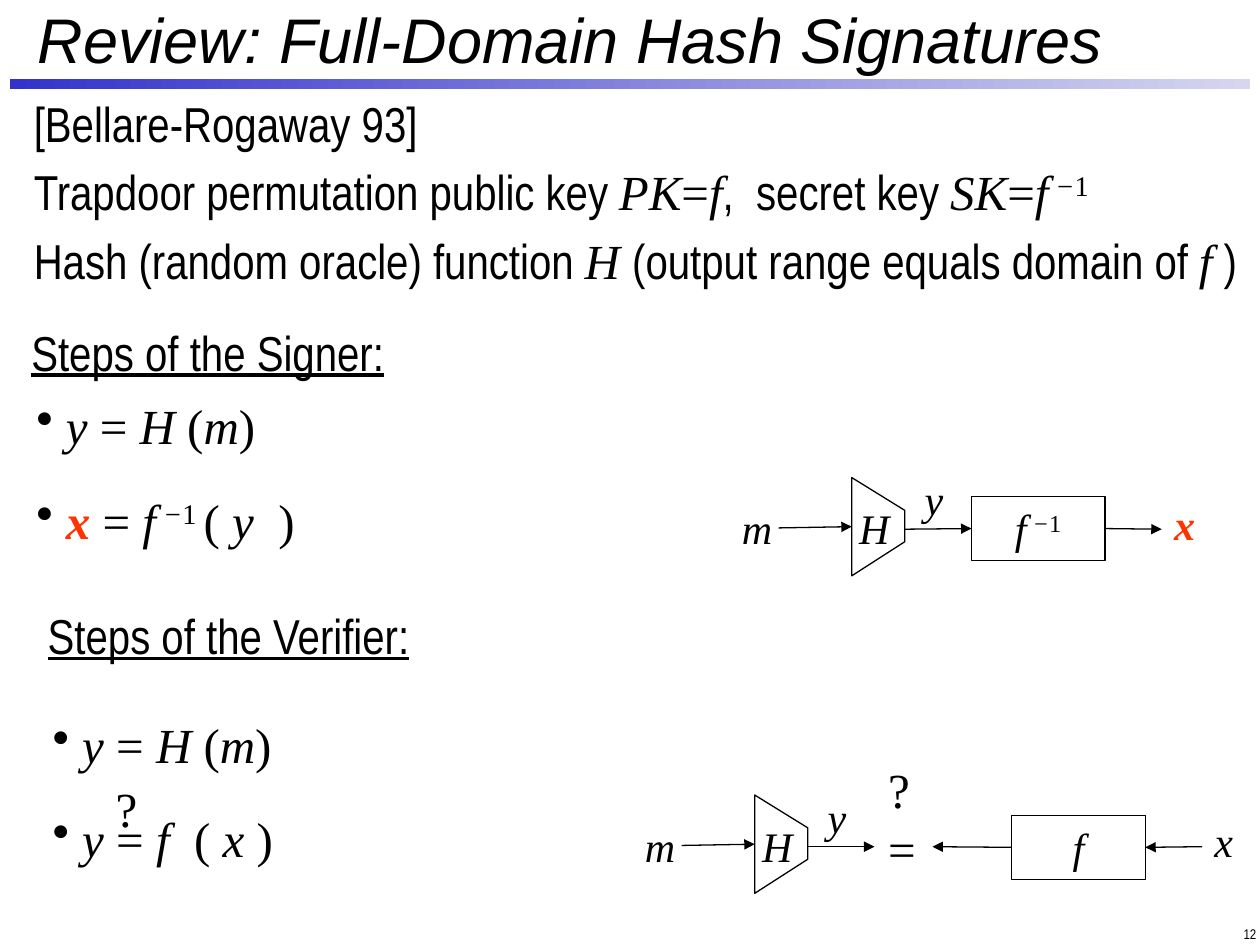
"""Build the slide on full-domain hash signatures."""
from lxml import etree
from pptx import Presentation
from pptx.dml.color import RGBColor
from pptx.enum.shapes import MSO_CONNECTOR, MSO_SHAPE
from pptx.enum.text import MSO_ANCHOR, PP_ALIGN
from pptx.oxml.ns import qn
from pptx.util import Pt

PX = 9144
STRAIGHT, RECT = MSO_CONNECTOR.STRAIGHT, MSO_SHAPE.RECTANGLE
TOP, MIDDLE = MSO_ANCHOR.TOP, MSO_ANCHOR.MIDDLE
LEFT, CENTER, RIGHT = PP_ALIGN.LEFT, PP_ALIGN.CENTER, PP_ALIGN.RIGHT
THEME = {
    "ink": RGBColor(0, 0, 0), "red": RGBColor(0xFF, 0x33, 0),
    "bar": (RGBColor(0x33, 0x33, 0xCC), RGBColor(0xD6, 0xD6, 0xEF)),
    "title": 36, "text": 28, "label": 24, "number": 8, "line": 0.75,
    "sans": "Arial", "narrow": "Arial Narrow", "serif": "Times New Roman",
}


def write(tf, paras, size, before=50, align=LEFT, anchor=TOP, wrap=False,
          bullet=False, hang=0, spacing=None):
    """Fill a frame; style letters: A sans, N narrow, i, b, u, s superscript, r red."""
    frame = {"word_wrap": wrap, "vertical_anchor": anchor,
             "margin_left": 10 * PX, "margin_right": 10 * PX,
             "margin_top": 5 * PX, "margin_bottom": 5 * PX}
    for name, value in frame.items():
        setattr(tf, name, value)
    for n, runs in enumerate(paras):
        p = tf.paragraphs[0] if n == 0 else tf.add_paragraph()
        p.alignment = align
        if spacing:
            p.line_spacing = spacing
        pPr = p._p.get_or_add_pPr()
        if hang:
            pPr.set("marL", str(hang * PX))
            pPr.set("indent", str(-hang * PX))
        if before:
            gap = etree.SubElement(pPr, qn("a:spcBef"))
            etree.SubElement(gap, qn("a:spcPct")).set("val", str(before * 1000))
        if bullet:
            etree.SubElement(pPr, qn("a:buChar")).set("char", "•")
        for text, style in runs:
            if text == "\n":
                p.add_line_break()
                continue
            r = p.add_run()
            r.text = text
            family = "sans" if "A" in style else "narrow" if "N" in style else "serif"
            font = {"name": THEME[family], "size": Pt(size), "italic": "i" in style,
                    "bold": "b" in style, "underline": "u" in style}
            for name, value in font.items():
                setattr(r.font, name, value)
            r.font.color.rgb = THEME["red" if "r" in style else "ink"]
            if "s" in style:
                r._r.get_or_add_rPr().set("baseline", "30000")


def arrow(x1, y1, x2, y2):
    """Add a thin line with a triangle at its end."""
    c = s.shapes.add_connector(STRAIGHT, x1 * PX, y1 * PX, x2 * PX, y2 * PX)
    c.line.color.rgb = THEME["ink"]
    c.line.width = Pt(THEME["line"])
    etree.SubElement(c.line._get_or_add_ln(), qn("a:tailEnd")).set("type", "triangle")
    etree.SubElement(c._element.spPr, qn("a:effectLst"))
    return c


prs = Presentation()
prs.slide_width, prs.slide_height = 1000 * PX, 750 * PX
s = prs.slides.add_slide(prs.slide_layouts[5])

sp = s.shapes.title
for name, value in {"left": 20, "top": 7, "width": 896, "height": 47}.items():
    setattr(sp, name, value * PX)
write(sp.text_frame, [[("Review: Full-Domain Hash Signatures", "Ai")]],
      THEME["title"], before=0, anchor=MIDDLE, wrap=True)

bar = s.shapes.add_shape(RECT, 8 * PX, 63 * PX, 984 * PX, 8 * PX)
bar.shadow.inherit = False
bar.line.fill.background()
bar.fill.gradient()
bar.fill.gradient_angle = 0
for stop, color in zip(bar.fill.gradient_stops, THEME["bar"]):
    stop.color.rgb = color

intro = [
    [("[Bellare-Rogaway 93]", "N")],
    [("Trapdoor permutation public key ", "N"), ("PK", "i"), ("=", ""), ("f", "i"),
     (",  secret key ", "N"), ("SK", "i"), ("=", ""), ("f", "i"), (" −", "is"), ("1", "s")],
    [("Hash (random oracle) function ", "N"), ("H ", "i"),
     ("(output range equals domain of ", "N"), ("f", "i"), (" )", "N")],
]
hash_step = [(" y ", "i"), ("= ", ""), ("H", "i"), (" (", ""), ("m", "i"), (")", "")]
sign_step = [(" ", "i"), ("x ", "bir"), ("= ", ""), ("f", "i"), (" −", "is"),
             ("1 ", "s"), ("( ", ""), ("y  ", "i"), (")", "")]
check_step = [(" y ", "i"), ("= ", ""), ("f  ", "i"), ("( ", ""), ("x ", "i"), (")", "")]

texts = [
    (17, 69, 983, 65, intro, "text", {"before": 20, "hang": 38, "wrap": True}),
    (15, 251, 347, 50, [[("Steps of the Signer:", "Nu")]], "text", {}),
    (19, 309, 347, 50, [hash_step], "text", {"bullet": True}),
    (19, 384, 347, 50, [sign_step], "text", {"bullet": True}),
    (28, 476, 347, 50, [[("Steps of the Verifier:", "Nu")]], "text", {}),
    (32, 562, 347, 50, [hash_step], "text", {"bullet": True}),
    (32, 637, 347, 50, [check_step], "text", {"bullet": True}),
    (82, 613, 37, 57, [[("?", "")]], "text", {}),
    (695, 598, 42, 103, [[("?", ""), ("\n", ""), ("=", "")]], "text", {}),
    (922, 395, 53, 50, [[("x", "bir")]], "label", {"spacing": 0.9}),
    (954, 647, 53, 50, [[("x", "i")]], "label", {"spacing": 0.9}),
    (799, 716, 208, 50, [[("12", "N")]], "number",
     {"before": 0, "align": RIGHT, "anchor": MIDDLE}),
]
circuits = [
    (0, 0, 771, 394, [("f", "i"), (" −", "is"), ("1", "s")]),
    (-77, 252, 803, 647, [(" f ", "i")]),
]
boxes, hash_arrows = [], []
for dx, dy, left, top, formula in circuits:
    for text, x, y, w in (("m", 579, 394, 39), ("y", 724, 371, 53), ("H", 672, 394, 53)):
        texts.append((x + dx, y + dy, w, 50, [[(text, "i")]], "label", {}))

    fb = s.shapes.build_freeform((676 + dx) * PX, (457 + dy) * PX, 1)
    fb.add_line_segments([((x + dx) * PX, (y + dy) * PX)
                          for x, y in ((718, 430), (718, 405), (676, 379))])
    box = s.shapes.add_shape(RECT, left * PX, top * PX, 106 * PX, 51 * PX)
    for sp in (fb.convert_to_shape(), box):
        sp.shadow.inherit = False
        sp.fill.background()
        sp.line.color.rgb = THEME["ink"]
        sp.line.width = Pt(THEME["line"])
    write(box.text_frame, [formula], THEME["label"], align=CENTER)
    boxes.append(box)

    arrow(618 + dx, 419 + dy, 676 + dx, 418 + dy)
    hash_arrows.append(arrow(718 + dx, 420 + dy, 771 + dx, 420 + dy))

signer_box, verifier_box = boxes
hash_arrows[0].end_connect(signer_box, 1)
arrow(876, 420, 922, 420).begin_connect(signer_box, 3)
arrow(954, 672, 909, 672).end_connect(verifier_box, 3)
arrow(803, 672, 740, 672).begin_connect(verifier_box, 1)

for x, y, w, h, paras, size, fmt in texts:
    tb = s.shapes.add_textbox(x * PX, y * PX, w * PX, h * PX)
    write(tb.text_frame, paras, THEME[size], **fmt)

prs.save("out.pptx")
